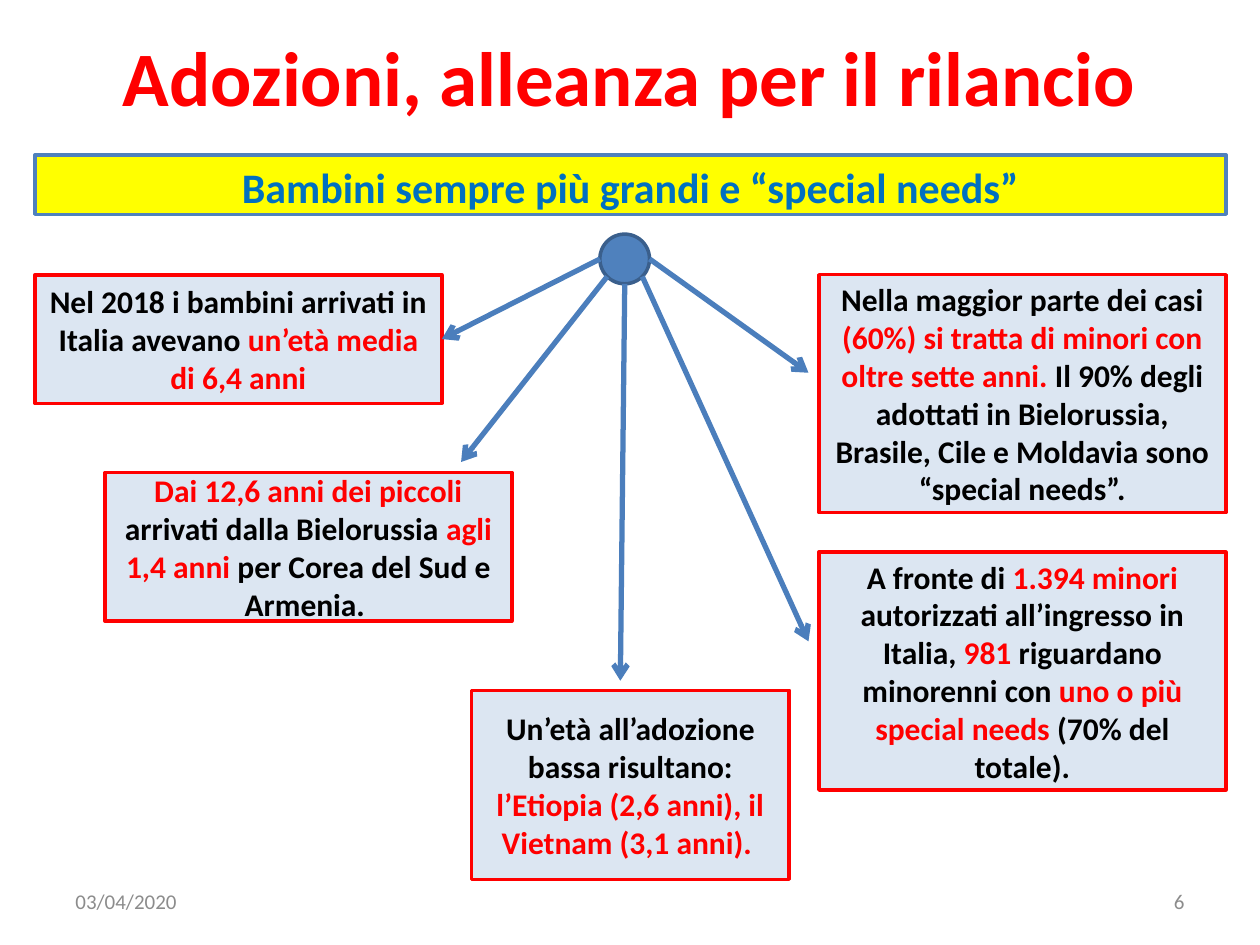
from dataclasses import dataclass
from math import cos, radians, sin

from pptx import Presentation
from pptx.dml.color import RGBColor
from pptx.enum import shapes, text
from pptx.oxml import ns, xmlchemy
from pptx.util import Pt


@dataclass(frozen=True)
class Theme:
    font: str = "Calibri"
    red: str = "FF0000"
    black: str = "000000"
    yellow: str = "FFFF00"
    heading: str = "0070C0"
    blue: str = "4F81BD"
    rim: str = "3A5F8C"
    arrow: str = "4B7EBC"
    card: str = "DCE6F2"
    grey: str = "8C8C8C"
    title_size: float = 44
    banner_size: float = 24
    card_size: float = 18
    footer_size: float = 12


T = Theme()
CENTER, MIDDLE = text.PP_ALIGN.CENTER, text.MSO_ANCHOR.MIDDLE

# Left, top, width, height and text; parts between bars are highlighted
CARDS = [
    (20, 157, 232.5, 73.5,
     "Nel 2018 i bambini arrivati in Italia avevano |un’età media di 6,4 anni"),
    (60, 270, 232.5, 85,
     "|Dai 12,6 anni dei piccoli |arrivati dalla Bielorussia |agli 1,4 anni "
     "|per Corea del Sud e Armenia. "),
    (269.5, 394.5, 181.5, 108,
     "Un’età all’adozione bassa risultano: "
     "|l’Etiopia (2,6 anni), il Vietnam (3,1 anni). "),
    (468, 315.5, 232.5, 136,
     "A fronte di |1.394 minori |autorizzati all’ingresso in Italia, |981 "
     "|riguardano minorenni con |uno o più special needs| (70% del totale)."),
    (468, 157, 232.5, 136,
     "Nella maggior parte dei casi |(60%) si tratta di minori con oltre sette "
     "anni. |Il 90% degli adottati in Bielorussia, Brasile, Cile e Moldavia "
     "sono “special needs”."),
]

HUB_X, HUB_Y, HUB_RADIUS = 357, 148, 14.2
# Angle on the hub's rim, then the arrow's end
ARROWS = [
    (180, 252.5, 193.75),
    (135, 263.5, 264),
    (90, 354.5, 389),
    (45, 462, 366.5),
    (0, 462, 213),
]


def rgb(color):
    return RGBColor.from_string(color)


def place(shape, *box):
    for name, value in zip(("left", "top", "width", "height"), box):
        setattr(shape, name, Pt(value))


def paint(shape, fill, line):
    shape.fill.solid()
    shape.fill.fore_color.rgb = rgb(fill)
    shape.line.color.rgb = rgb(line)
    shape.line.width = Pt(2)


def write(shape, parts, size, align, anchor, bold=True):
    tf = shape.text_frame
    frame = {"word_wrap": True, "auto_size": text.MSO_AUTO_SIZE.NONE,
             "vertical_anchor": anchor}
    for name, value in frame.items():
        setattr(tf, name, value)
    p = tf.paragraphs[0]
    p.alignment = align
    for words, color in parts:
        r = p.add_run()
        r.text = words
        for name, value in {"name": T.font, "size": Pt(size), "bold": bold}.items():
            setattr(r.font, name, value)
        r.font.color.rgb = rgb(color)


def add_footer(s, left, words, align):
    sp = s.shapes.add_textbox(Pt(left), Pt(500.5), Pt(168), Pt(28.75))
    write(sp, [(words, T.grey)], T.footer_size, align, MIDDLE, bold=False)


def add_preset(s, kind, box, fill, line):
    sp = s.shapes.add_shape(kind, *map(Pt, box))
    sp.shadow.inherit = False
    paint(sp, fill, line)
    return sp


def add_card(s, *box, words):
    sp = add_preset(s, shapes.MSO_SHAPE.RECTANGLE, box, T.card, T.red)
    parts = [(part, T.red if i % 2 else T.black)
             for i, part in enumerate(words.split("|")) if part]
    write(sp, parts, T.card_size, CENTER, MIDDLE)
    return sp


def add_arrow(s, angle, end_x, end_y):
    start_x = HUB_X + HUB_RADIUS * cos(radians(angle))
    start_y = HUB_Y + HUB_RADIUS * sin(radians(angle))
    c = s.shapes.add_connector(shapes.MSO_CONNECTOR.STRAIGHT,
                               *map(Pt, (start_x, start_y, end_x, end_y)))
    c.line.color.rgb = rgb(T.arrow)
    c.line.width = Pt(3)
    tail = xmlchemy.OxmlElement("a:tailEnd")
    tail.set("type", "arrow")
    sp_pr = c._element.spPr
    sp_pr.find(ns.qn("a:ln")).append(tail)
    sp_pr.append(xmlchemy.OxmlElement("a:effectLst"))
    return c


def main():
    prs = Presentation()
    prs.slide_width, prs.slide_height = Pt(720), Pt(540)
    s = prs.slides.add_slide(prs.slide_layouts[0])

    # Title and banner
    title, banner = s.shapes.title, s.placeholders[1]
    place(title, 54, 15, 612, 57)
    write(title, [("Adozioni, alleanza per il rilancio", T.red)],
          T.title_size, CENTER, MIDDLE)
    place(banner, 20, 88.5, 680.5, 34)
    paint(banner, T.yellow, T.blue)
    write(banner, [("Bambini sempre più grandi e “special needs”", T.heading)],
          T.banner_size, CENTER, text.MSO_ANCHOR.TOP)

    # Date and page number
    add_footer(s, 36, "03/04/2020", text.PP_ALIGN.LEFT)
    add_footer(s, 516, "6", text.PP_ALIGN.RIGHT)

    # Cards
    cards = [add_card(s, *box, words=words) for *box, words in CARDS]

    # Hub and its arrows; the first one touches the first card's right side
    hub = (HUB_X - HUB_RADIUS, HUB_Y - HUB_RADIUS, 2 * HUB_RADIUS, 2 * HUB_RADIUS)
    add_preset(s, shapes.MSO_SHAPE.OVAL, hub, T.blue, T.rim)
    arrows = [add_arrow(s, *arrow) for arrow in ARROWS]
    arrows[0].end_connect(cards[0], 3)

    prs.save("out.pptx")


if __name__ == "__main__":
    main()
